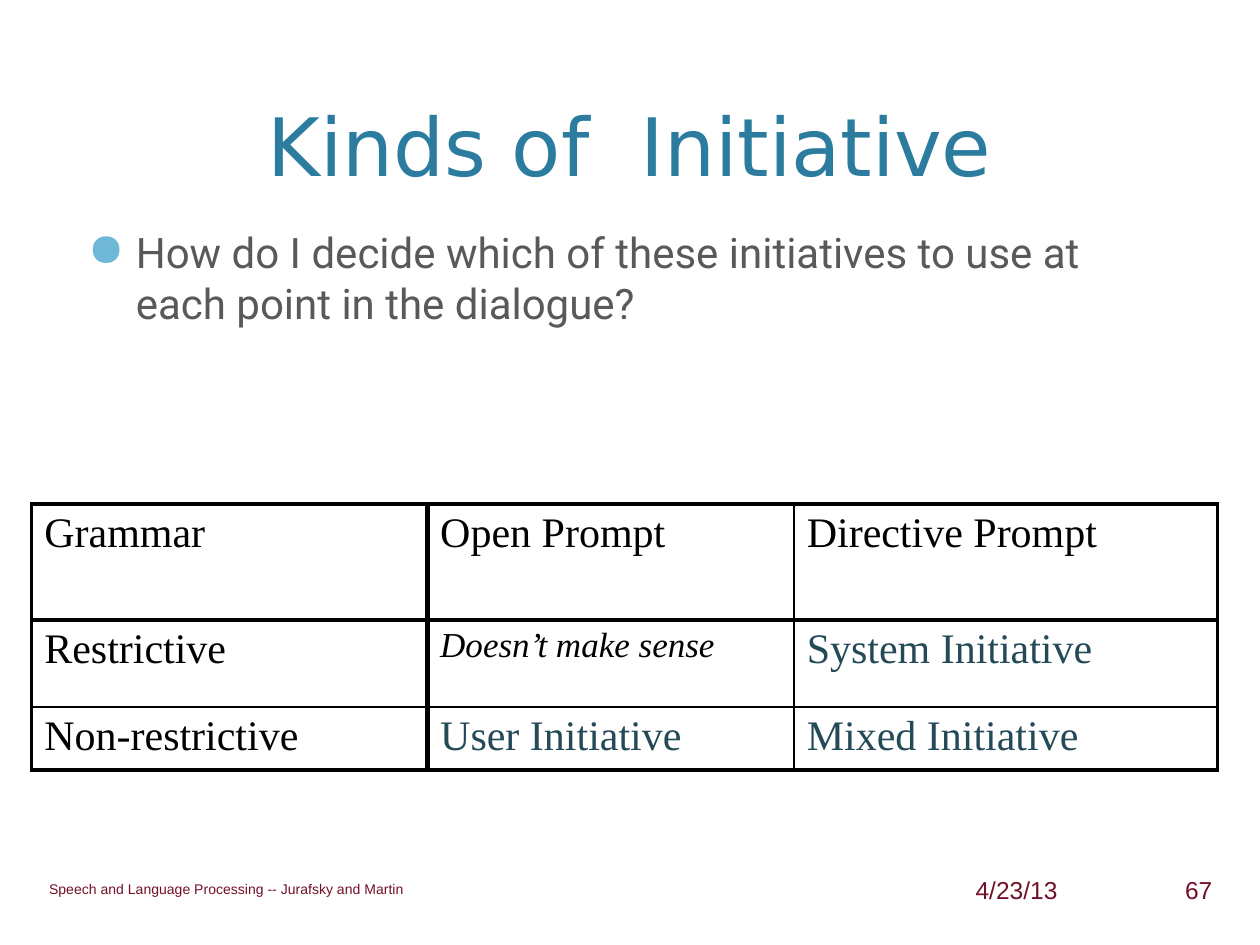
from lxml.etree import SubElement
from pptx import Presentation
from pptx.dml.color import RGBColor
from pptx.enum.text import MSO_ANCHOR, MSO_AUTO_SIZE, PP_ALIGN
from pptx.oxml import parse_xml
from pptx.oxml.ns import nsdecls, qn
from pptx.util import Cm, Pt

BLACK, TEAL = "000000", "244A58"
RULE_WEIGHTS = [2.25, 3, 1, 2.25]
GRID = [
    ["Grammar", "Open Prompt", "Directive Prompt"],
    ["Restrictive", "Doesn’t make sense", "System Initiative"],
    ["Non-restrictive", "User Initiative", "Mixed Initiative"],
]


def colour(value):
    return RGBColor.from_string(value)


def style(para, name, size, value, align=PP_ALIGN.LEFT):
    para.alignment = align
    para.font.name = name
    para.font.size = Pt(size)
    para.font.color.rgb = colour(value)


def place(shape, box):
    shape.left, shape.top, shape.width, shape.height = [Cm(length) for length in box]


def add_text(page, box, text, anchor):
    shape = page.shapes.add_textbox(*[Cm(length) for length in box])
    frame = shape.text_frame
    frame.word_wrap = True
    frame.vertical_anchor = anchor
    frame.text = text
    return frame.paragraphs[0]


def add_title(page, box):
    title = page.shapes.title
    place(title, box)
    frame = title.text_frame
    frame.text = "Kinds of  Initiative"
    frame.auto_size = MSO_AUTO_SIZE.NONE
    frame.vertical_anchor = MSO_ANCHOR.BOTTOM
    style(frame.paragraphs[0], "DejaVu Sans", 46, "2C7C9F", PP_ALIGN.CENTER)


def add_question(page, box):
    para = add_text(
        page, box,
        "How do I decide which of these initiatives to use at each point in the dialogue?",
        MSO_ANCHOR.TOP,
    )
    props = para._p.get_or_add_pPr()
    props.set("marL", str(Cm(0.97)))
    props.set("indent", str(-Cm(0.97)))
    bullet_colour = SubElement(props, qn("a:buClr"))
    SubElement(bullet_colour, qn("a:srgbClr"), val="6FB7D7")
    SubElement(props, qn("a:buSzPct"), val="110000")
    SubElement(props, qn("a:buChar"), char="●")
    style(para, "Roboto", 24, "595959")


def set_borders(cell, row, column):
    weights = {
        "lnL": RULE_WEIGHTS[column],
        "lnR": RULE_WEIGHTS[column + 1],
        "lnT": RULE_WEIGHTS[row],
        "lnB": RULE_WEIGHTS[row + 1],
    }
    props = cell._tc.get_or_add_tcPr()
    for position, (side, weight) in enumerate(weights.items()):
        props.insert(position, parse_xml(
            f'<a:{side} {nsdecls("a")} w="{Pt(weight)}"><a:solidFill>'
            f'<a:srgbClr val="{BLACK}"/></a:solidFill></a:{side}>'
        ))


def add_initiative_table(page, box):
    table = page.shapes.add_table(3, 3, *[Cm(length) for length in box]).table
    table.first_row = table.horz_banding = False
    for column, width in zip(table.columns, [7.98, 7.39, 8.53]):
        column.width = Cm(width)
    for row, height in zip(table.rows, [2.34, 1.75, 1.14]):
        row.height = Cm(height)
    for r, texts in enumerate(GRID):
        for c, text in enumerate(texts):
            cell = table.cell(r, c)
            cell.text = text
            cell.fill.background()
            set_borders(cell, r, c)
            para = cell.text_frame.paragraphs[0]
            senseless = (r, c) == (1, 1)
            is_initiative = text.endswith("Initiative")
            style(para, "Times New Roman", 20 if senseless else 24,
                  TEAL if is_initiative else BLACK)
            para.font.italic = senseless


def add_footer(page, box):
    left, top, width, height = box
    parts = [
        (0, 13.44, "Speech and Language Processing -- Jurafsky and Martin", 8, PP_ALIGN.LEFT),
        (width - 9.04, 5.92, "4/23/13", 14, PP_ALIGN.RIGHT),
        (width - 2.74, 2.74, "67", 14, PP_ALIGN.RIGHT),
    ]
    for offset, part_width, text, size, align in parts:
        para = add_text(page, (left + offset, top, part_width, height), text, MSO_ANCHOR.MIDDLE)
        style(para, "Arial", size, "721028", align)


def main():
    deck = Presentation()
    deck.slide_width, deck.slide_height = Cm(25.4), Cm(19.05)
    page = deck.slides.add_slide(deck.slide_layouts[5])
    page.background.fill.solid()
    page.background.fill.fore_color.rgb = colour("FFFFFF")
    add_title(page, (1.52, 0.3, 22.35, 3.71))
    add_question(page, (1.52, 4.45, 22.35, 12.07))
    add_initiative_table(page, (0.64, 10.16, 23.9, 5.23))
    add_footer(page, (0.74, 17.42, 23.95, 1.02))
    deck.save("out.pptx")


if __name__ == "__main__":
    main()
